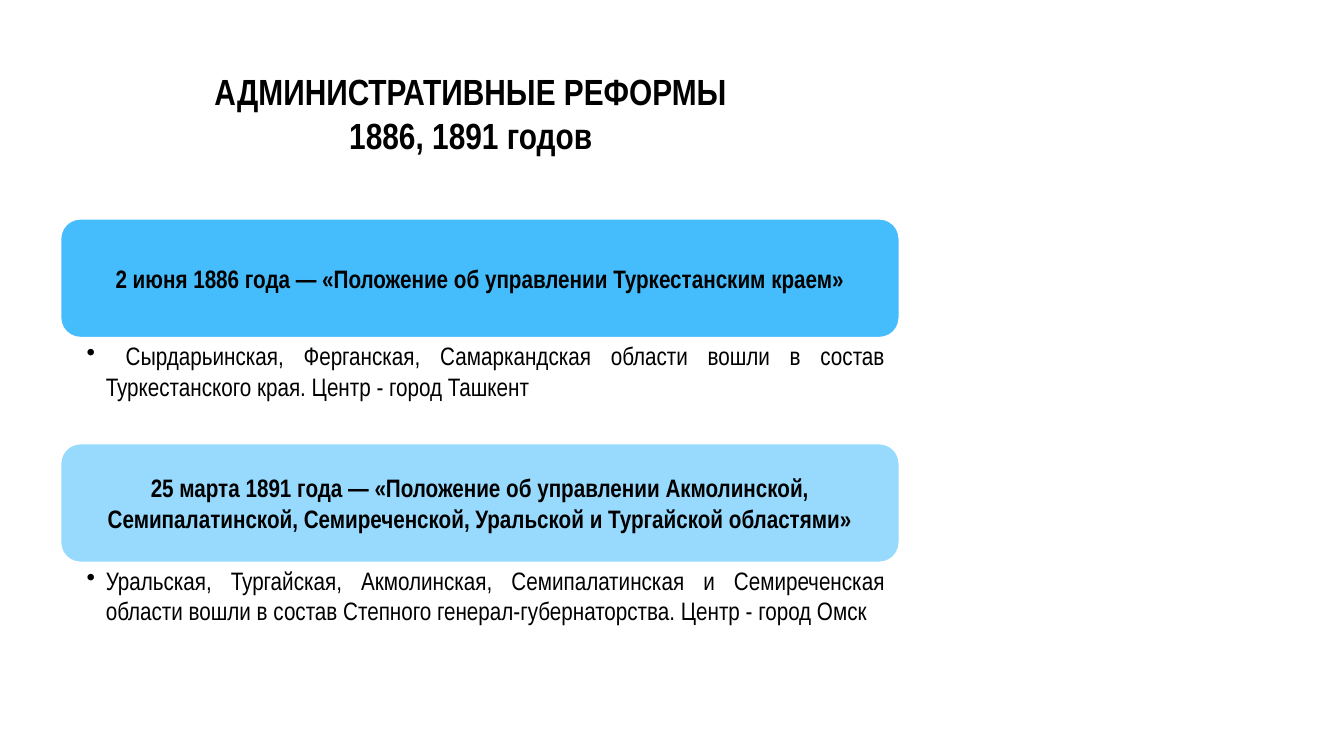
from dataclasses import dataclass

from lxml import etree
from pptx import Presentation
from pptx.dml.color import RGBColor
from pptx.enum.shapes import MSO_SHAPE
from pptx.enum.text import MSO_ANCHOR, PP_ALIGN
from pptx.oxml.ns import qn
from pptx.slide import Slide
from pptx.text.text import TextFrame
from pptx.util import Inches, Pt

ROUNDED = MSO_SHAPE.ROUNDED_RECTANGLE
TOP, MIDDLE = MSO_ANCHOR.TOP, MSO_ANCHOR.MIDDLE
CENTER, JUSTIFY = PP_ALIGN.CENTER, PP_ALIGN.JUSTIFY

FONT = "Arial Narrow"
BLACK, WHITE, BLUE = "000000", "FFFFFF", "31B6FD"
LEFT, WIDTH = 0.6, 8.32
HEADER_HEIGHT, DETAIL_HEIGHT = 1.18, 1.05
FIRST_TOP = 2.17
REFORM_STEP = HEADER_HEIGHT + DETAIL_HEIGHT
BULLET_INDENT = 0.19


@dataclass
class Reform:
    decree: str
    detail: str
    opacity: int  # percent


REFORMS = [
    Reform(
        "2 июня 1886 года — «Положение об управлении Туркестанским краем»",
        " Сырдарьинская, Ферганская, Самаркандская области вошли в состав "
        "Туркестанского края. Центр - город Ташкент",
        90,
    ),
    Reform(
        "25 марта 1891 года — «Положение об управлении Акмолинской, "
        "Семипалатинской, Семиреченской, Уральской и Тургайской областями»",
        "Уральская, Тургайская, Акмолинская, Семипалатинская и Семиреченская "
        "области вошли в состав Степного генерал-губернаторства. "
        "Центр - город Омск",
        50,
    ),
]


def color(value: str) -> RGBColor:
    return RGBColor.from_string(value)


def write(frame: TextFrame, text: str, size: float, bold: bool,
          alignment: PP_ALIGN, anchor: MSO_ANCHOR,
          insets: tuple[float, float, float, float], bullet: bool = False) -> None:
    """Fill a frame with one paragraph; insets run left, top, right, bottom."""
    frame.word_wrap = True
    frame.vertical_anchor = anchor
    (frame.margin_left, frame.margin_top,
     frame.margin_right, frame.margin_bottom) = map(Inches, insets)
    frame.text = text
    paragraph = frame.paragraphs[0]
    paragraph.alignment = alignment
    if bullet:
        properties = paragraph._p.get_or_add_pPr()
        properties.set("marL", str(Inches(BULLET_INDENT)))
        properties.set("indent", str(-Inches(BULLET_INDENT)))
        etree.SubElement(properties, qn("a:buChar"), char="•")
    for run in paragraph.runs:
        run.font.name = FONT
        run.font.size = Pt(size)
        run.font.bold = bold
        run.font.color.rgb = color(BLACK)


def add_title(slide: Slide, text: str) -> None:
    box = slide.shapes.add_textbox(Inches(0.98), Inches(0.7), Inches(7.38), Inches(0.84))
    write(box.text_frame, text, 26, True, CENTER, MIDDLE, (0.07, 0.04, 0.07, 0.04))


def add_reform(slide: Slide, reform: Reform, top: float) -> None:
    # Decree banner
    banner = slide.shapes.add_shape(
        ROUNDED, Inches(LEFT), Inches(top), Inches(WIDTH), Inches(HEADER_HEIGHT))
    banner.shadow.inherit = False
    banner.fill.solid()
    banner.fill.fore_color.rgb = color(BLUE)
    fill_color = banner.fill._xPr.find(qn("a:solidFill"))[0]
    etree.SubElement(fill_color, qn("a:alpha"), val=str(reform.opacity * 1000))
    banner.line.color.rgb = color(WHITE)
    banner.line.width = Pt(1.25)
    write(banner.text_frame, reform.decree, 18, True, CENTER, MIDDLE,
          (0.07, 0.07, 0.07, 0.07))

    # Bulleted outcome
    detail = slide.shapes.add_textbox(
        Inches(LEFT), Inches(top + HEADER_HEIGHT), Inches(WIDTH), Inches(DETAIL_HEIGHT))
    write(detail.text_frame, reform.detail, 18, False, JUSTIFY, TOP,
          (0.26, 0.03, 0.14, 0.03), bullet=True)


def main() -> None:
    presentation = Presentation()
    presentation.slide_width = Inches(13.33)
    presentation.slide_height = Inches(7.5)
    slide = presentation.slides.add_slide(presentation.slide_layouts[6])

    add_title(slide, "АДМИНИСТРАТИВНЫЕ РЕФОРМЫ\v1886, 1891 годов")
    for index, reform in enumerate(REFORMS):
        add_reform(slide, reform, FIRST_TOP + index * REFORM_STEP)

    presentation.save("out.pptx")


if __name__ == "__main__":
    main()
